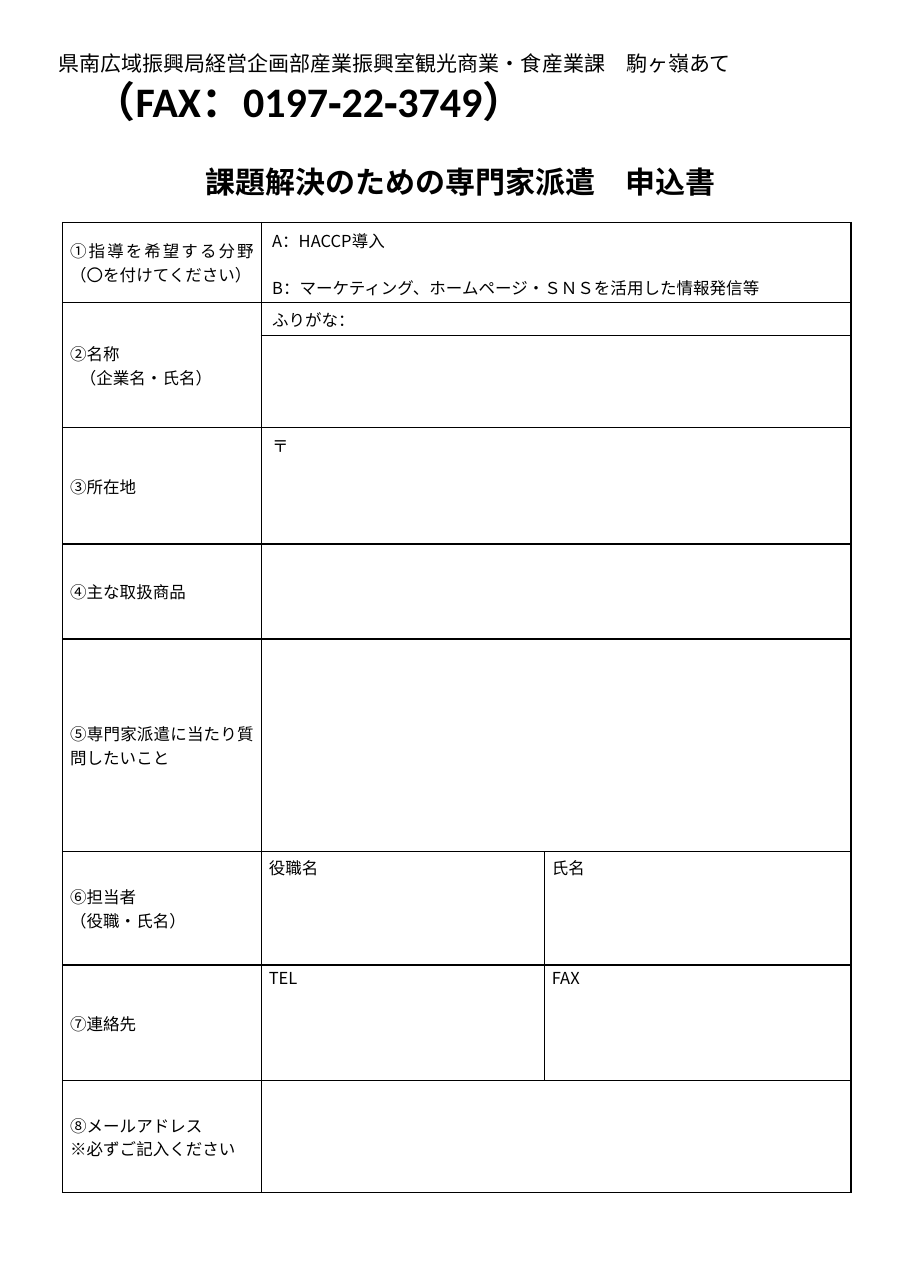
from lxml import etree
from pptx import Presentation
from pptx.dml.color import RGBColor
from pptx.enum import text
from pptx.oxml import ns
from pptx.util import Inches, Pt

BLACK = RGBColor(0, 0, 0)
LATIN, JAPANESE = "Calibri", "Noto Sans CJK JP"


def add_run(p, words, size, name, bold=False):
    r = p.add_run()
    r.text = words
    r.font.size, r.font.name, r.font.bold = Pt(size), name, bold
    r.font.color.rgb = BLACK
    ea = etree.SubElement(r.font._element, ns.qn("a:ea"))
    ea.set("typeface", JAPANESE)


def add_borders(cell):
    tcPr = cell._tc.get_or_add_tcPr()
    for i, side in enumerate(("lnL", "lnR", "lnT", "lnB")):
        ln = etree.Element(ns.qn("a:" + side), w=str(Pt(1)))
        fill = etree.SubElement(ln, ns.qn("a:solidFill"))
        etree.SubElement(fill, ns.qn("a:srgbClr"), val=str(BLACK))
        tcPr.insert(i, ln)


prs = Presentation()
prs.slide_width, prs.slide_height = Inches(8.5), Inches(11.93)
s = prs.slides.add_slide(prs.slide_layouts[5])

# Title
title = s.shapes.title
title.left, title.top = Inches(0.44), Inches(1.43)
title.width, title.height = Inches(7.65), Inches(0.5)
tf = title.text_frame
tf.auto_size = text.MSO_AUTO_SIZE.NONE
tf.vertical_anchor = text.MSO_ANCHOR.MIDDLE
p = tf.paragraphs[0]
p.alignment = text.PP_ALIGN.CENTER
add_run(p, "課題解決のための専門家派遣　申込書", 20, LATIN, True)

# Addressee and fax number
addressee = s.shapes.add_textbox(Inches(0.44), Inches(0.42), Inches(7.65), Inches(0.9))
tf = addressee.text_frame
tf.word_wrap = True
p = tf.paragraphs[0]
add_run(p, "県南広域振興局経営企画部産業振興室観光商業・食産業課　駒ヶ嶺あて", 14, LATIN)
p = tf.add_paragraph()
p._p.get_or_add_pPr().set("marL", str(Inches(0.33)))
add_run(p, "（FAX：0197‐22‐3749）", 28, LATIN, True)

# Application form: label, left entry, right entry (None: entry spans both)
ROWS = [
    (0.74, ["①指導を希望する分野（〇を付けてください）"],
     ["A：HACCP導入", "B：マーケティング、ホームページ・ＳＮＳを活用した情報発信等"], None),
    (0.31, ["②名称", "（企業名・氏名）"], ["ふりがな："], None),
    (0.85, [], [], None),
    (1.08, ["③所在地"], ["〒"], None),
    (0.88, ["④主な取扱商品"], [], None),
    (1.97, ["⑤専門家派遣に当たり質問したいこと"], [], None),
    (1.05, ["⑥担当者", "（役職・氏名）"], ["役職名"], ["氏名"]),
    (1.07, ["⑦連絡先"], ["TEL"], ["FAX"]),
    (1.04, ["⑧メールアドレス", "※必ずご記入ください"], [], None),
]
NAME_ROW, CONTACT_ROW = 1, 6

form = s.shapes.add_table(len(ROWS), 3, Inches(0.58), Inches(2.06), Inches(7.31), Inches(8.99))
table = form.table
table.first_row = table.horz_banding = False
for column, width in zip(table.columns, (1.84, 2.62, 2.84)):
    column.width = Inches(width)

for row, (height, *entries) in enumerate(ROWS):
    table.rows[row].height = Inches(height)
    split = entries[2] is not None
    for col, lines in enumerate(entries):
        cell = table.cell(row, col)
        cell.fill.background()
        add_borders(cell)
        tight = col == 0 or split
        if tight:
            cell.margin_left = cell.margin_right = Inches(0.07)
            cell.margin_top = cell.margin_bottom = 0
        if col == 0:
            cell.vertical_anchor = text.MSO_ANCHOR.MIDDLE
        tf = cell.text_frame
        tf.paragraphs[0].font.size = Pt(11)
        for i, line in enumerate(lines or []):
            p = tf.add_paragraph() if i else tf.paragraphs[0]
            if tight:
                p.alignment = text.PP_ALIGN.JUSTIFY
            if col and row == CONTACT_ROW:
                p.line_spacing = 1.15
            if i and col:
                p.space_before = Pt(16)
            if i and row == NAME_ROW:
                p._p.get_or_add_pPr().set("marL", str(Inches(0.09)))
            add_run(p, line, 11, JAPANESE)
    if not split:
        table.cell(row, 1).merge(table.cell(row, 2))
table.cell(NAME_ROW, 0).merge(table.cell(NAME_ROW + 1, 0))

prs.save("out.pptx")
